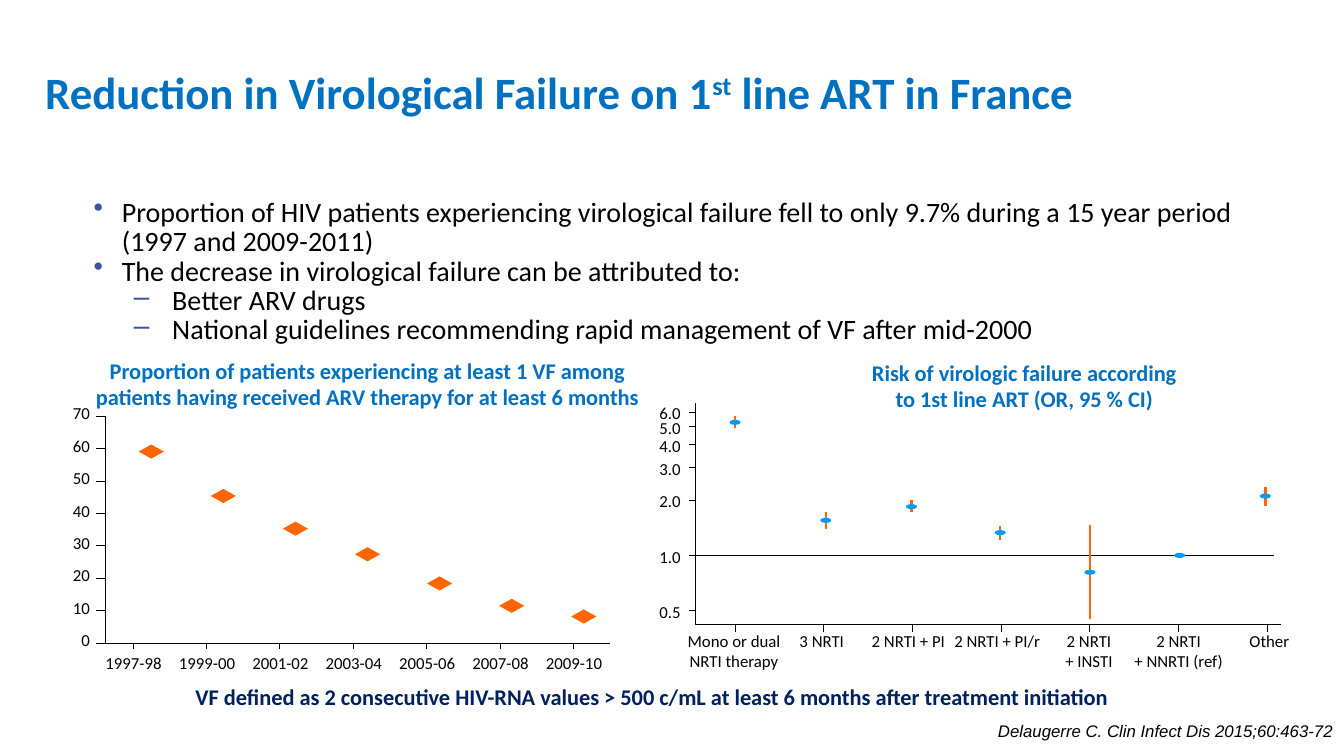
import math

import lxml.etree
import pptx
import pptx.dml.color
import pptx.enum.shapes
import pptx.enum.text
import pptx.oxml.ns
import pptx.util

PX = 9144
BLUE = pptx.dml.color.RGBColor(0x00, 0x70, 0xC0)
NAVY = pptx.dml.color.RGBColor(0x00, 0x20, 0x60)
BLACK = pptx.dml.color.RGBColor(0x00, 0x00, 0x00)
ORANGE = pptx.dml.color.RGBColor(0xFF, 0x66, 0x00)
SKY = pptx.dml.color.RGBColor(0x00, 0x99, 0xFF)
BULLET = pptx.dml.color.RGBColor(0x3C, 0x54, 0x9F)

TITLE = {"name": "Calibri", "size": pptx.util.Pt(32), "bold": True}
BODY = {"name": "Calibri", "size": pptx.util.Pt(20)}
HEADING = {"name": "Calibri", "size": pptx.util.Pt(16), "bold": True}
LABEL = {"name": "Calibri", "size": pptx.util.Pt(12)}
CITATION = {"name": "Arial", "size": pptx.util.Pt(12), "italic": True}

LEFT = pptx.enum.text.PP_ALIGN.LEFT
CENTER = pptx.enum.text.PP_ALIGN.CENTER
RIGHT = pptx.enum.text.PP_ALIGN.RIGHT
DIAMOND = pptx.enum.shapes.MSO_SHAPE.DIAMOND
OVAL = pptx.enum.shapes.MSO_SHAPE.OVAL

BULLETS = [
    (0, "Proportion of HIV patients experiencing virological failure fell to only 9.7% "
        "during a 15 year period \v(1997 and 2009-2011)"),
    (0, "The decrease in virological failure can be attributed to:"),
    (1, "Better ARV drugs"),
    (1, "National guidelines recommending rapid management of VF after mid-2000"),
]
BULLET_LEVELS = [("•", 44, 28), ("–", 94, 38)]

FAILURE_RATES = [
    ("1997-98", 59.1), ("1999-00", 45.4), ("2001-02", 35.3), ("2003-04", 27.4),
    ("2005-06", 18.4), ("2007-08", 11.5), ("2009-10", 8.2),
]

RISKS = [
    ("Mono or dual\nNRTI therapy", 152, -1, 0, 5.28, 4.89, 5.69),
    ("3 NRTI", 101, -2, 2, 1.55, 1.39, 1.72),
    ("2 NRTI + PI", 136, -4, -1, 1.84, 1.72, 2.0),
    ("2 NRTI + PI/r", 148, -4, -1, 1.33, 1.21, 1.44),
    ("2 NRTI\n+ INSTI", 122, -1, 0, 0.81, 0.45, 1.46),
    ("2 NRTI\n+ NNRTI (ref)", 214, 0, 1, 1.0, 1.0, 1.0),
    ("Other", 101, 2, -2, 2.1, 1.85, 2.36),
]


def style(runs, formats, color):
    """Apply font formats and a colour to runs."""
    for run in runs:
        for attribute, value in formats.items():
            setattr(run.font, attribute, value)
        run.font.color.rgb = color


def add_text(shapes, box, text, formats, color, align=LEFT, wrap=True):
    """Add a styled text box and return its text frame."""
    frame = shapes.add_textbox(*(round(length * PX) for length in box)).text_frame
    frame.word_wrap = wrap
    frame.text = text
    for paragraph in frame.paragraphs:
        paragraph.alignment = align
        style(paragraph.runs, formats, color)
    return frame


def add_line(shapes, start, end, color=BLACK, width=0.63):
    """Draw a straight line between two points."""
    line = shapes.add_connector(
        pptx.enum.shapes.MSO_CONNECTOR.STRAIGHT,
        *(round(length * PX) for length in (*start, *end)))
    line.line.color.rgb = color
    line.line.width = pptx.util.Pt(width)
    lxml.etree.SubElement(line._element.spPr, pptx.oxml.ns.qn("a:effectLst"))


def add_marker(shapes, kind, center, size, color):
    """Draw a filled marker around its centre."""
    corner = [middle - length / 2 for middle, length in zip(center, size)]
    marker = shapes.add_shape(kind, *(round(length * PX) for length in (*corner, *size)))
    marker.shadow.inherit = False
    marker.fill.solid()
    marker.fill.fore_color.rgb = color
    marker.line.fill.background()


def add_axes(shapes, box):
    """Draw the left and bottom axes of a plot."""
    left, top, width, height = box
    builder = shapes.build_freeform(left + width, top + height, scale=PX)
    builder.add_line_segments([(left, top + height), (left, top)], close=False)
    axes = builder.convert_to_shape()
    axes.shadow.inherit = False
    axes.fill.background()
    axes.line.color.rgb = BLACK
    axes.line.width = pptx.util.Pt(0.63)


def draw_title(slide, box):
    """Write the slide title with its superscript."""
    frame = add_text(slide.shapes, box, "", TITLE, BLUE)
    frame.vertical_anchor = pptx.enum.text.MSO_ANCHOR.MIDDLE
    paragraph = frame.paragraphs[0]
    for text in ("Reduction in Virological Failure on 1", "st", " line ART in France"):
        paragraph.add_run().text = text
    style(paragraph.runs, TITLE, BLUE)
    paragraph.runs[1].font._element.set("baseline", "30000")


def draw_bullets(slide, box):
    """Write the two-level bullet list."""
    text = "\n".join(text for _, text in BULLETS)
    frame = add_text(slide.shapes, box, text, BODY, BLACK)
    for paragraph, (level, _) in zip(frame.paragraphs, BULLETS):
        character, margin, hanging = BULLET_LEVELS[level]
        paragraph.level = level
        paragraph.line_spacing = pptx.util.Pt(21)
        properties = paragraph._p.get_or_add_pPr()
        properties.set("marL", str(margin * PX))
        properties.set("indent", str(-hanging * PX))
        color = lxml.etree.SubElement(properties, pptx.oxml.ns.qn("a:buClr"))
        lxml.etree.SubElement(color, pptx.oxml.ns.qn("a:srgbClr"), val=str(BULLET))
        lxml.etree.SubElement(properties, pptx.oxml.ns.qn("a:buChar"), char=character)


def draw_failure_plot(slide, box):
    """Plot the share of patients with virological failure by period."""
    left, top, width, height = box
    bottom = top + height
    shapes = slide.shapes.add_group_shape().shapes
    add_axes(shapes, box)
    for value in range(0, 80, 10):
        y = bottom - value / 70 * height
        add_line(shapes, (left - 10, y), (left, y))
        add_text(shapes, (left - 43, y - 18, 37, 30), str(value), LABEL, BLACK, RIGHT)
    for index, (period, rate) in enumerate(FAILURE_RATES):
        x = left + 27 + index * 72.8
        add_line(shapes, (x, bottom + 6), (x, bottom))
        add_text(shapes, (x - 38, bottom + 5, 77, 30), period, LABEL, BLACK, CENTER, False)
        center = (left + 45 + index * 71.5, bottom - rate / 70 * height)
        add_marker(shapes, DIAMOND, center, (25, 14), ORANGE)
    add_text(shapes, (left - 23, top - 64, 565, 64),
             "Proportion of patients experiencing at least 1 VF among "
             "patients having received ARV therapy for at least 6 months",
             HEADING, BLUE, CENTER)


def draw_risk_plot(slide, box):
    """Plot odds ratios with confidence intervals on a log scale."""
    left, top, width, height = box
    bottom = top + height
    shapes = slide.shapes.add_group_shape().shapes

    def ratio_y(ratio):
        """Return the height of an odds ratio on the log axis."""
        return top + 151 - 55 * math.log2(ratio)

    add_axes(shapes, box)
    add_line(shapes, (left + 574, ratio_y(1)), (left, ratio_y(1)))
    for ratio in (0.5, 1, 2, 3, 4, 5, 6):
        y = ratio_y(ratio)
        add_line(shapes, (left - 7, y), (left, y))
        add_text(shapes, (left - 76, y - 14, 71, 30), f"{ratio:.1f}", LABEL, BLACK, RIGHT)
    for index, (name, label_width, label_shift, shift, ratio, low, high) in enumerate(RISKS):
        x = left + 39 + index * 88
        add_line(shapes, (x, bottom + 7), (x, bottom))
        label_left = x + label_shift - label_width / 2
        label_height = 30 + 20 * name.count("\n")
        add_text(shapes, (label_left, bottom + 1, label_width, label_height),
                 name, LABEL, BLACK, CENTER)
        if low < high:
            add_line(shapes, (x + shift, ratio_y(low)), (x + shift, ratio_y(high)), ORANGE, 1.75)
        add_marker(shapes, OVAL, (x + shift, ratio_y(ratio)), (11, 5), SKY)
    add_text(shapes, (left + 28, top - 49, 596, 64),
             "Risk of virologic failure according\nto 1st line ART (OR, 95 % CI)",
             HEADING, BLUE, CENTER)


def draw_notes(slide, box):
    """Write the definition and the citation below the plots."""
    left, top, width, height = box
    add_text(slide.shapes, (left, top, 950, 37),
             "VF defined as 2 consecutive HIV-RNA values > 500 c/mL "
             "at least 6 months after treatment initiation",
             HEADING, NAVY, wrap=False)
    add_text(slide.shapes, (left + width - 353, top + height - 30, 353, 30),
             "Delaugerre C. Clin Infect Dis 2015;60:463-72", CITATION, BLACK, wrap=False)


def main():
    """Build and save the slide."""
    presentation = pptx.Presentation()
    presentation.slide_width = 1333 * PX
    presentation.slide_height = 750 * PX
    slide = presentation.slides.add_slide(presentation.slide_layouts[6])
    draw_title(slide, (35, 28, 1231, 125))
    draw_bullets(slide, (67, 192, 1254, 205))
    draw_risk_plot(slide, (690, 400, 581, 220))
    draw_failure_plot(slide, (105, 413, 500, 225))
    draw_notes(slide, (184, 673, 1149, 67))
    presentation.save("out.pptx")


if __name__ == "__main__":
    main()
